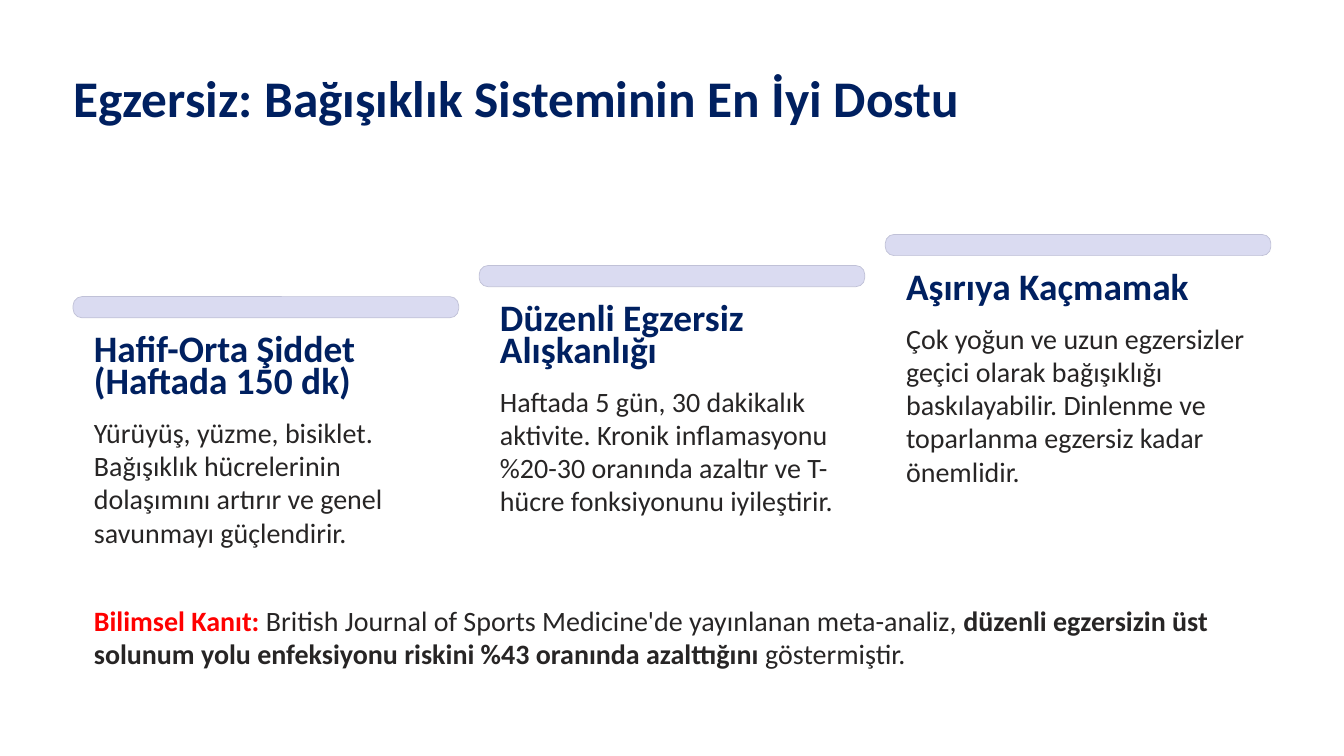
from dataclasses import dataclass

from pptx import Presentation
from pptx.dml.color import RGBColor
from pptx.enum.shapes import MSO_SHAPE as Preset
from pptx.slide import Slide
from pptx.util import Cm, Pt


@dataclass(frozen=True)
class Theme:
    font: str = "Calibri"
    navy: str = "002060"
    body: str = "272525"
    accent: str = "FF0000"
    bar: str = "DADBF1"
    bar_line: str = "C0C1D7"
    title_size: float = 44
    heading_size: float = 32
    body_size: float = 24
    title_spacing: float = 55.5
    heading_spacing: float = 27.5
    body_spacing: float = 28.5


@dataclass(frozen=True)
class TextRun:
    text: str
    color: str
    bold: bool = False


@dataclass(frozen=True)
class Box:
    """Position and size in centimetres."""
    left: float
    top: float
    width: float
    height: float

    def lengths(self) -> tuple[Cm, Cm, Cm, Cm]:
        return Cm(self.left), Cm(self.top), Cm(self.width), Cm(self.height)


@dataclass(frozen=True)
class Step:
    heading: str
    heading_lines: int
    body: str
    body_lines: int


THEME = Theme()

MARGIN = 2.21
FIRST_BAR_TOP = 8.97
STEP_RIGHT = 12.28
STEP_UP = 0.94
BAR_WIDTH = 11.66
BAR_HEIGHT = 0.64
TEXT_INDENT = 0.63
TEXT_WIDTH = 10.39
HEADING_OFFSET = 1.26
HEADING_LINE = 0.97
HEADING_GAP = 0.4
BODY_LINE = 1.01

STEPS = [
    Step("Hafif-Orta Şiddet (Haftada 150 dk)", 2,
         "Yürüyüş, yüzme, bisiklet. Bağışıklık hücrelerinin dolaşımını artırır "
         "ve genel savunmayı güçlendirir.", 4),
    Step("Düzenli Egzersiz Alışkanlığı", 2,
         "Haftada 5 gün, 30 dakikalık aktivite. Kronik inflamasyonu %20-30 "
         "oranında azaltır ve T-hücre fonksiyonunu iyileştirir.", 4),
    Step("Aşırıya Kaçmamak", 1,
         "Çok yoğun ve uzun egzersizler geçici olarak bağışıklığı "
         "baskılayabilir. Dinlenme ve toparlanma egzersiz kadar önemlidir.", 5),
]

EVIDENCE = [
    TextRun("Bilimsel Kanıt: ", THEME.accent, True),
    TextRun("British Journal of Sports Medicine'de yayınlanan meta-analiz, ",
            THEME.body),
    TextRun("düzenli egzersizin üst solunum yolu enfeksiyonu riskini %43 "
            "oranında azalttığını ", THEME.body, True),
    TextRun("göstermiştir.", THEME.body),
]


def add_text(slide: Slide, box: Box, runs: list[TextRun], size: float,
             spacing: float) -> None:
    frame = slide.shapes.add_textbox(*box.lengths()).text_frame
    frame.word_wrap = True
    frame.margin_left = frame.margin_right = 0
    frame.margin_top = frame.margin_bottom = 0
    paragraph = frame.paragraphs[0]
    paragraph.line_spacing = Pt(spacing)
    for text_run in runs:
        run = paragraph.add_run()
        run.text = text_run.text
        run.font.name = THEME.font
        run.font.size = Pt(size)
        run.font.bold = text_run.bold
        run.font.color.rgb = RGBColor.from_string(text_run.color)


def add_bar(slide: Slide, box: Box) -> None:
    shape = slide.shapes.add_shape(Preset.ROUNDED_RECTANGLE, *box.lengths())
    shape.adjustments[0] = 0.42
    shape.shadow.inherit = False
    shape.fill.solid()
    shape.fill.fore_color.rgb = RGBColor.from_string(THEME.bar)
    shape.line.color.rgb = RGBColor.from_string(THEME.bar_line)
    shape.line.width = Pt(0.6)


def add_step(slide: Slide, index: int, step: Step) -> None:
    """Draw one stair: each is further right and higher than the last."""
    left = MARGIN + index * STEP_RIGHT
    top = FIRST_BAR_TOP - index * STEP_UP
    add_bar(slide, Box(left, top, BAR_WIDTH, BAR_HEIGHT))

    text_left = left + TEXT_INDENT
    heading_top = top + HEADING_OFFSET
    heading_height = step.heading_lines * HEADING_LINE
    add_text(slide, Box(text_left, heading_top, TEXT_WIDTH, heading_height),
             [TextRun(step.heading, THEME.navy, True)],
             THEME.heading_size, THEME.heading_spacing)
    body_top = heading_top + heading_height + HEADING_GAP
    add_text(slide,
             Box(text_left, body_top, TEXT_WIDTH, step.body_lines * BODY_LINE),
             [TextRun(step.body, THEME.body)],
             THEME.body_size, THEME.body_spacing)


def main() -> None:
    presentation = Presentation()
    presentation.slide_width = Cm(40.64)
    presentation.slide_height = Cm(22.86)
    slide = presentation.slides.add_slide(presentation.slide_layouts[6])

    add_text(slide, Box(MARGIN, 1.91, 33.96, 1.98),
             [TextRun("Egzersiz: Bağışıklık Sisteminin En İyi Dostu",
                      THEME.navy, True)],
             THEME.title_size, THEME.title_spacing)
    for index, step in enumerate(STEPS):
        add_step(slide, index, step)
    add_text(slide, Box(MARGIN + TEXT_INDENT, 18.26, 36.22, 2.01), EVIDENCE,
             THEME.body_size, THEME.body_spacing)

    presentation.save("out.pptx")


if __name__ == "__main__":
    main()
